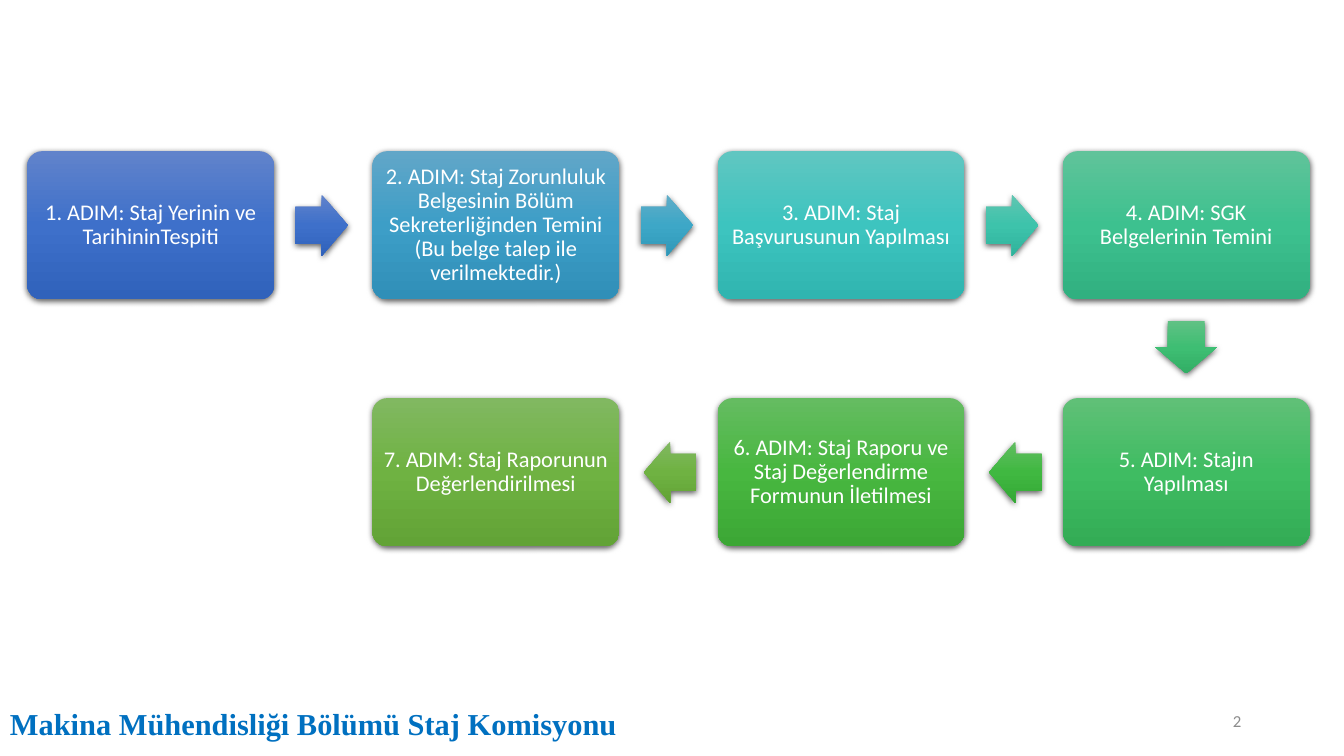
from lxml import etree
from pptx import Presentation
from pptx.dml.color import RGBColor
from pptx.enum.shapes import MSO_SHAPE
from pptx.enum.text import MSO_ANCHOR, PP_ALIGN
from pptx.oxml.ns import qn
from pptx.util import Inches, Pt

ROUND, ARROW = MSO_SHAPE.ROUNDED_RECTANGLE, MSO_SHAPE.RIGHT_ARROW
LEFT, CENTER, RIGHT = PP_ALIGN.LEFT, PP_ALIGN.CENTER, PP_ALIGN.RIGHT
TOP, MIDDLE = MSO_ANCHOR.TOP, MSO_ANCHOR.MIDDLE

THEME = {
    "body": "Calibri", "serif": "Times New Roman",
    "step": 16, "footer": 21.7, "number": 12,
    "white": "FFFFFF", "blue": "0070C0", "gray": "8C8C8C",
}

# Grid of steps: four columns, two rows
X0, Y0 = 0.27, 1.5
X_LAST = 10.54
COL, ROW = (X_LAST - X0) / 3, 2.45
BOX_W, BOX_H = 2.45, 1.47
ARROW_W, ARROW_H = 0.52, 0.61
GAP = 0.21

# Text, column, row, box gradient, direction of next arrow, arrow gradient
STEPS = [
    ("1. ADIM: Staj Yerinin ve TarihininTespiti", 0, 0,
     "6183CB 3E70CA 3062BB", 0, "6183CB 3E70CA 3062BB"),
    ("2. ADIM: Staj Zorunluluk Belgesinin Bölüm Sekreterliğinden Temini "
     "(Bu belge talep ile verilmektedir.)", 1, 0,
     "61A6C8 3D9EC7 308FB8", 0, "61ADC8 3DA7C7 3098B8"),
    ("3. ADIM: Staj Başvurusunun Yapılması", 2, 0,
     "60C6C1 3DC4BF 30B5B0", 0, "60C5B1 3DC3AB 30B39C"),
    ("4. ADIM: SGK Belgelerinin Temini", 3, 0,
     "60C39A 3DC18F 31B080", 90, "60C184 3EBE73 32AE65"),
    ("5. ADIM: Stajın Yapılması", 3, 1,
     "60C077 3FBC62 33AC55", 180, "61BD61 40B841 34A835"),
    ("6. ADIM: Staj Raporu ve Staj Değerlendirme Formunun İletilmesi", 2, 1,
     "65BC61 48B740 3CA735", 180, "81B861 6FB242 62A336"),
    ("7. ADIM: Staj Raporunun Değerlendirilmesi", 1, 1,
     "81B861 6FB242 62A336", None, None),
]


def add_text(sp, text, size, color, font="body", bold=False, align=LEFT,
             anchor=TOP, spacing=1.0, before=0, inset=None):
    tf = sp.text_frame
    tf.word_wrap = True
    tf.vertical_anchor = anchor
    if inset is not None:
        tf.margin_left = tf.margin_right = Inches(inset)
        tf.margin_top = tf.margin_bottom = Inches(inset)
    p = tf.paragraphs[0]
    p.alignment, p.line_spacing, p.space_before = align, spacing, Pt(before)
    r = p.add_run()
    r.text = text
    r.font.size, r.font.bold = Pt(THEME[size]), bold
    r.font.name = THEME[font]
    r.font.color.rgb = RGBColor.from_string(THEME[color])


def add_block(kind, x, y, w, h, colors, adjustments):
    sp = s.shapes.add_shape(kind, Inches(x), Inches(y), Inches(w), Inches(h))
    for i, value in enumerate(adjustments):
        sp.adjustments[i] = value
    # Vertical gradient of three stops
    sp.fill.gradient()
    sp.fill.gradient_angle = 270
    grad = sp.element.spPr.find(qn("a:gradFill"))
    grad.set("rotWithShape", "0")
    stops = grad.find(qn("a:gsLst"))
    for stop in list(stops):
        stops.remove(stop)
    for pos, color in zip((0, 50000, 100000), colors.split()):
        stop = etree.SubElement(stops, qn("a:gs"), pos=str(pos))
        etree.SubElement(stop, qn("a:srgbClr"), val=color)
    sp.line.fill.background()
    # Soft shadow below
    sp.shadow.inherit = False
    shadow = etree.SubElement(
        sp.element.spPr.find(qn("a:effectLst")), qn("a:outerShdw"),
        blurRad=str(Pt(4.5)), dist=str(Pt(1.5)), dir="5400000",
        algn="ctr", rotWithShape="0")
    black = etree.SubElement(shadow, qn("a:srgbClr"), val="000000")
    etree.SubElement(black, qn("a:alpha"), val="63000")
    return sp


prs = Presentation()
prs.slide_width, prs.slide_height = Inches(13.33), Inches(7.5)
s = prs.slides.add_slide(prs.slide_layouts[6])

# Steps, each with the arrow to the next
for text, col, row, box_colors, turn, arrow_colors in STEPS:
    x, y = X0 + col * COL, Y0 + row * ROW
    sp = add_block(ROUND, x, y, BOX_W, BOX_H, box_colors, [0.1])
    add_text(sp, text, "step", "white", align=CENTER, anchor=MIDDLE,
             spacing=0.9, inset=0.07)
    if turn is None:
        continue
    ax, ay = {
        0: (x + BOX_W + GAP, y + (BOX_H - ARROW_H) / 2),
        90: (x + (BOX_W - ARROW_W) / 2, y + BOX_H + GAP - 0.04),
        180: (x - GAP - ARROW_W, y + (BOX_H - ARROW_H) / 2),
    }[turn]
    sp = add_block(ARROW, ax, ay, ARROW_W, ARROW_H, arrow_colors, [0.6, 0.5])
    sp.rotation = turn

# Footer and slide number
sp = s.shapes.add_textbox(0, Inches(7.04), Inches(6.78), Inches(0.47))
add_text(sp, "Makina Mühendisliği Bölümü Staj Komisyonu", "footer", "blue",
         font="serif", bold=True, spacing=0.7, before=10)
sp = s.shapes.add_textbox(Inches(9.41), Inches(6.95), Inches(3), Inches(0.4))
add_text(sp, "2", "number", "gray", align=RIGHT, anchor=MIDDLE)

prs.save("out.pptx")
